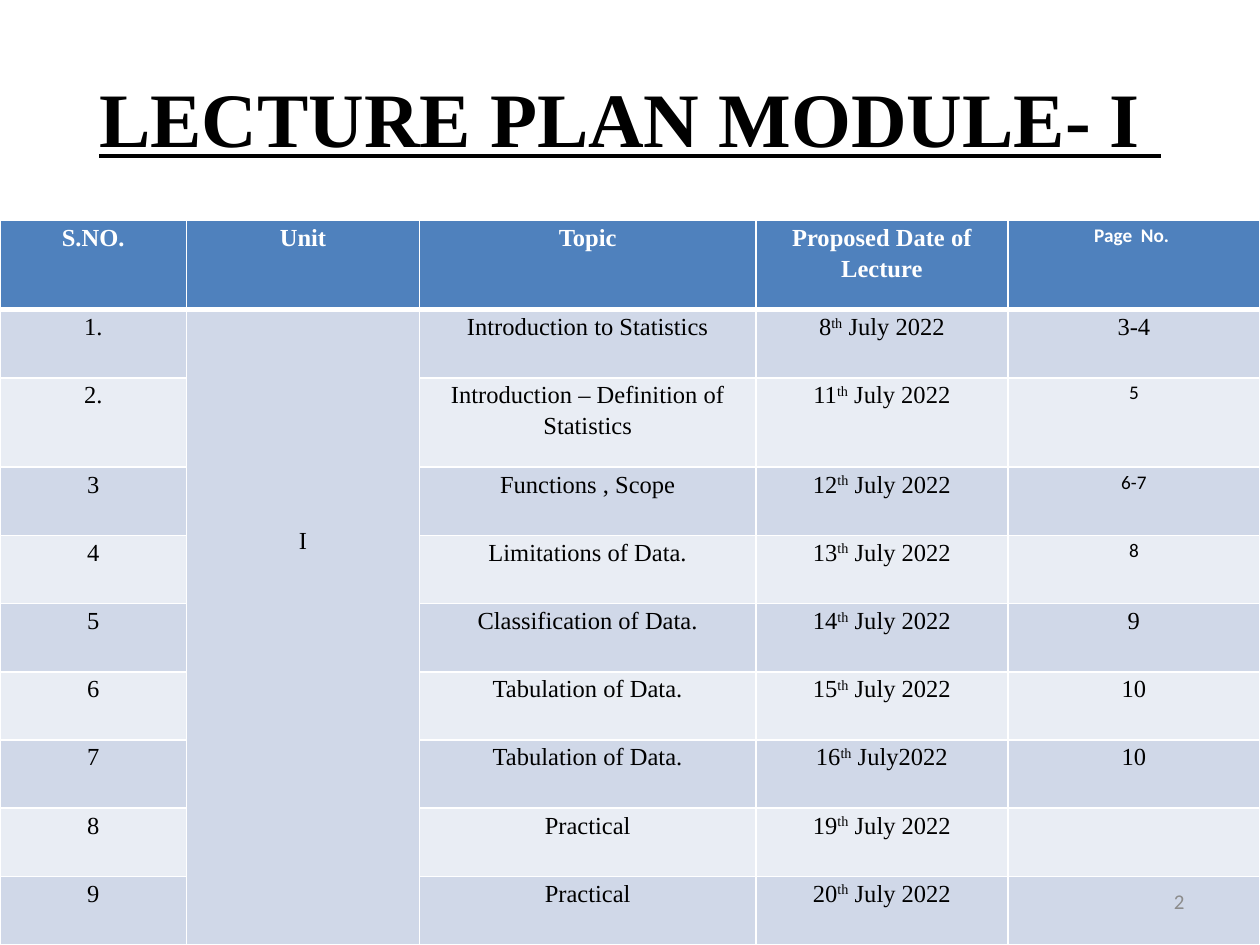
from dataclasses import dataclass

from lxml import etree
from pptx import Presentation
from pptx import util as u
from pptx.dml.color import RGBColor
from pptx.enum import text
from pptx.oxml import ns


@dataclass(frozen=True)
class Theme:
    serif: str = "Times New Roman"
    sans: str = "Calibri"
    title_size: float = 44
    body_size: float = 14
    small_size: float = 11
    number_size: float = 12
    black: str = "000000"
    white: str = "FFFFFF"
    grey: str = "8C8C8C"
    header: str = "4F81BD"
    bands: tuple = ("D0D8E8", "E9EDF4")


class SlideBuilder:
    def __init__(self, slide, theme):
        self.slide = slide
        self.theme = theme

    def add_run(self, paragraph, words, size, font, color, bold=False):
        run = paragraph.add_run()
        run.text = words
        run.font.size = u.Pt(size)
        run.font.name = font
        run.font.bold = bold
        run.font.color.rgb = RGBColor.from_string(color)
        return run

    def title(self, words, left, top, width, height):
        shape = self.slide.shapes.title
        shape.left, shape.top = u.Pt(left), u.Pt(top)
        shape.width, shape.height = u.Pt(width), u.Pt(height)
        shape.text_frame.vertical_anchor = text.MSO_ANCHOR.MIDDLE
        paragraph = shape.text_frame.paragraphs[0]
        paragraph.alignment = text.PP_ALIGN.CENTER
        run = self.add_run(paragraph, words, self.theme.title_size,
                           self.theme.serif, self.theme.black, bold=True)
        run.font.underline = True

    def page_number(self, words, left, top, width, height):
        shape = self.slide.shapes.add_textbox(
            u.Pt(left), u.Pt(top), u.Pt(width), u.Pt(height))
        frame = shape.text_frame
        frame.word_wrap = True
        frame.vertical_anchor = text.MSO_ANCHOR.MIDDLE
        paragraph = frame.paragraphs[0]
        paragraph.alignment = text.PP_ALIGN.RIGHT
        self.add_run(paragraph, words, self.theme.number_size,
                     self.theme.sans, self.theme.grey)

    def table(self, left, top, columns, rows):
        shape = self.slide.shapes.add_table(
            len(rows), len(columns), u.Pt(left), u.Pt(top),
            u.Pt(sum(columns)), u.Pt(sum(rows)))
        table = shape.table
        table.first_row = table.horz_banding = False
        for column, width in zip(table.columns, columns):
            column.width = u.Pt(width)
        for row, height in zip(table.rows, rows):
            row.height = u.Pt(height)
        return table

    def cell_style(self, cell, fill, top=1, bottom=1):
        properties = cell._tc.get_or_add_tcPr()
        for side, width in (("L", 1), ("R", 1), ("T", top), ("B", bottom)):
            line = etree.SubElement(properties, ns.qn(f"a:ln{side}"), w=str(u.Pt(width)))
            solid = etree.SubElement(line, ns.qn("a:solidFill"))
            etree.SubElement(solid, ns.qn("a:srgbClr"), val=self.theme.white)
        cell.fill.solid()
        cell.fill.fore_color.rgb = RGBColor.from_string(fill)

    def cell_text(self, cell, parts, color, bold=False, small=False, offset=0):
        """Write the parts; every second part is superscript."""
        cell.margin_left = cell.margin_right = u.Pt(5)
        cell.margin_top, cell.margin_bottom = u.Pt(offset), 0
        paragraph = cell.text_frame.paragraphs[0]
        paragraph.alignment = text.PP_ALIGN.CENTER
        paragraph.line_spacing = 1.15
        size = self.theme.small_size if small else self.theme.body_size
        font = self.theme.sans if small else self.theme.serif
        for index, words in enumerate(parts):
            run = self.add_run(paragraph, words, size, font, color, bold)
            if index % 2:
                run.font._element.set("baseline", "30000")


HEADINGS = ["S.NO.", "Unit", "Topic", "Proposed Date of Lecture", "Page  No. "]
# Number, topic, day, month and year, pages
LECTURES = [
    ("1.", "Introduction to Statistics", "8", " July 2022", "3-4"),
    ("2.", "Introduction – Definition of Statistics", "11", " July 2022", "5"),
    ("3", "Functions , Scope", "12", " July 2022", "6-7"),
    ("4", "Limitations of Data.", "13", " July 2022", "8"),
    ("5", "Classification of Data.", "14", " July 2022", "9"),
    ("6", "Tabulation of Data.", "15", " July 2022", "10"),
    ("7", "Tabulation of Data.", "16", " July2022", "10"),
    ("8", "Practical", "19", " July 2022", ""),
    ("9", "Practical", "20", " July 2022", ""),
]
SMALL_PAGES = {"5", "6-7", "8"}
COLUMNS = [106.6, 133.2, 192.2, 144, 144]
TALL_ROW, ROW = 51, 39


def main():
    presentation = Presentation()
    presentation.slide_width, presentation.slide_height = u.Pt(720), u.Pt(540)
    theme = Theme()
    slide = presentation.slides.add_slide(presentation.slide_layouts[5])
    builder = SlideBuilder(slide, theme)

    # Title
    builder.title("LECTURE PLAN MODULE- I ", 36, 21.6, 648, 90)

    # Lecture table: header row
    heights = [TALL_ROW, ROW, TALL_ROW] + [ROW] * (len(LECTURES) - 2)
    table = builder.table(0, 126, COLUMNS, heights)
    for column, heading in enumerate(HEADINGS):
        cell = table.cell(0, column)
        builder.cell_style(cell, theme.header, bottom=3)
        builder.cell_text(cell, [heading], theme.white, bold=True,
                          small=column == len(HEADINGS) - 1)

    # Lecture rows
    for row, (number, topic, day, month, pages) in enumerate(LECTURES, 1):
        contents = [[number], [], [topic], [day, "th", month], [pages]]
        for column, parts in enumerate(contents):
            cell = table.cell(row, column)
            band = 0 if column == 1 else (row - 1) % 2
            builder.cell_style(cell, theme.bands[band], top=3 if row == 1 else 1)
            if any(parts):
                builder.cell_text(cell, parts, theme.black,
                                  small=column == 4 and pages in SMALL_PAGES)

    # Unit cell spanning all lectures
    unit = table.cell(1, 1)
    unit.merge(table.cell(len(LECTURES), 1))
    builder.cell_text(unit, ["I"], theme.black, offset=122)

    # Slide number
    builder.page_number("2", 516, 500.5, 168, 28.8)

    presentation.save("out.pptx")


if __name__ == "__main__":
    main()
